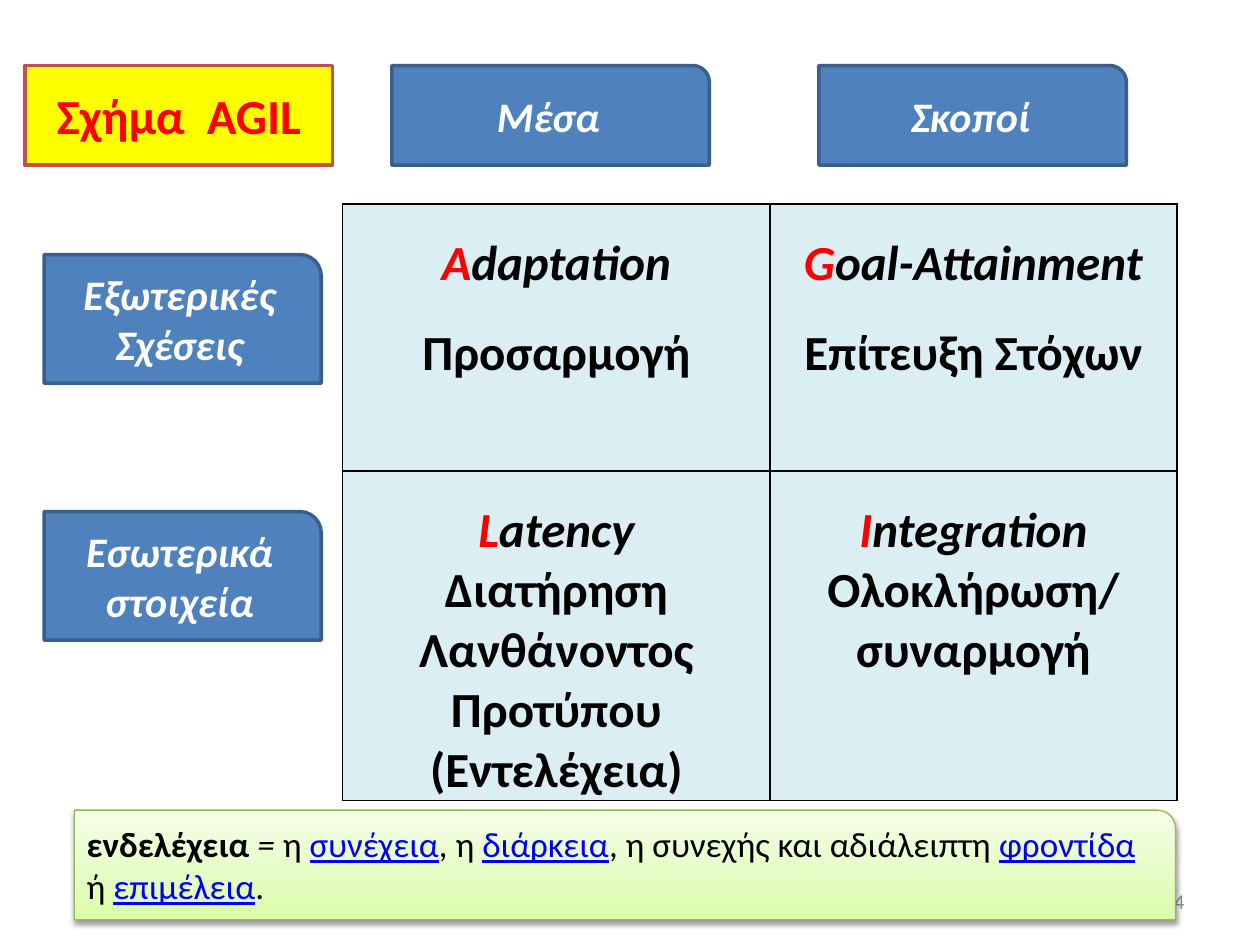
from dataclasses import dataclass

from lxml.etree import SubElement
from pptx import Presentation
from pptx.dml.color import RGBColor
from pptx.enum.shapes import MSO_SHAPE
from pptx.enum.text import MSO_ANCHOR, PP_ALIGN
from pptx.oxml import parse_xml
from pptx.oxml.ns import nsdecls, qn
from pptx.util import Inches, Pt

FONT = "Calibri"
BLACK = RGBColor(0x00, 0x00, 0x00)
WHITE = RGBColor(0xFF, 0xFF, 0xFF)
RED = RGBColor(0xFF, 0x00, 0x00)
YELLOW = RGBColor(0xFF, 0xFF, 0x00)
BLUE = RGBColor(0x4F, 0x81, 0xBD)
DARK_BLUE = RGBColor(0x3A, 0x5F, 0x8C)
BRICK = RGBColor(0xC0, 0x50, 0x4D)
PALE_BLUE = RGBColor(0xDB, 0xEE, 0xF4)
GREEN = RGBColor(0x98, 0xB9, 0x55)
GREY = RGBColor(0x8C, 0x8C, 0x8C)
LINK_BLUE = RGBColor(0x00, 0x00, 0xFF)
NOTE_STOPS = ((0, "DAFDA7"), (35, "E4FCC2"), (100, "F5FFE7"))


@dataclass
class Label:
    lines: list[str]
    left: float
    top: float
    width: float
    height: float


@dataclass
class Function:
    """One AGIL function: English name, Greek lines and their line spacing."""
    name: str
    greek: list[str]
    spacing: float = 1.0


LABELS = [
    Label(["Εξωτερικές Σχέσεις"], 0.35, 2.02, 2.2, 1.02),
    Label(["Εσωτερικά", "στοιχεία"], 0.35, 4.06, 2.2, 1.02),
    Label(["Μέσα"], 3.11, 0.52, 2.52, 0.79),
    Label(["Σκοποί"], 6.5, 0.52, 2.44, 0.79),
]
TITLE = Label(["Σχήμα  AGIL"], 0.2, 0.52, 2.44, 0.79)
NOTE = Label([], 0.59, 6.43, 8.74, 0.87)
FUNCTIONS = [
    [Function("Adaptation", ["Προσαρμογή"], 1.5),
     Function("Goal-Attainment", ["Επίτευξη Στόχων"], 1.5)],
    [Function("Latency", ["Διατήρηση Λανθάνοντος", "Προτύπου", "(Εντελέχεια)"]),
     Function("Integration", ["Ολοκλήρωση/", "συναρμογή"])],
]
LINK = {"color": LINK_BLUE, "underline": True}
NOTE_RUNS = [
    ("ενδελέχεια ", {"bold": True}), ("= ", {"italic": True}), ("η ", {}),
    ("συνέχεια", LINK), (", η ", {}), ("διάρκεια", LINK),
    (", η συνεχής και αδιάλειπτη ", {}), ("φροντίδα", LINK),
    (" ή ", {}), ("επιμέλεια", LINK), (".", {}),
]


def add_run(p, text: str, *, size: float, color: RGBColor = BLACK,
            bold: bool = False, italic: bool = False,
            underline: bool = False) -> None:
    r = p.add_run()
    r.text = text
    r.font.name, r.font.size = FONT, Pt(size)
    r.font.bold, r.font.italic = bold, italic
    r.font.underline = underline
    r.font.color.rgb = color


def add_paragraph(tf, first: bool, align: PP_ALIGN, spacing: float = 1.0):
    p = tf.paragraphs[0] if first else tf.add_paragraph()
    p.alignment, p.line_spacing = align, spacing
    return p


def add_box(slide, label: Label, preset: MSO_SHAPE, line: RGBColor,
            line_width: float, fill: RGBColor | None = None, **text_format):
    sp = slide.shapes.add_shape(preset, Inches(label.left), Inches(label.top),
                                Inches(label.width), Inches(label.height))
    sp.shadow.inherit = False
    if fill is not None:
        sp.fill.solid()
        sp.fill.fore_color.rgb = fill
    sp.line.color.rgb = line
    sp.line.width = Pt(line_width)
    tf = sp.text_frame
    tf.word_wrap = True
    tf.vertical_anchor = MSO_ANCHOR.MIDDLE
    for i, text in enumerate(label.lines):
        add_run(add_paragraph(tf, i == 0, PP_ALIGN.CENTER), text, **text_format)
    return sp


def set_borders(cell) -> None:
    tc_pr = cell._tc.get_or_add_tcPr()
    for side in ("lnL", "lnR", "lnT", "lnB"):
        ln = SubElement(tc_pr, qn(f"a:{side}"), w=str(Pt(1)))
        fill = SubElement(ln, qn("a:solidFill"))
        SubElement(fill, qn("a:srgbClr"), val=str(BLACK))


def fill_cell(cell, function: Function) -> None:
    set_borders(cell)
    cell.fill.solid()
    cell.fill.fore_color.rgb = PALE_BLUE
    cell.margin_left = cell.margin_right = Inches(0.07)
    cell.margin_top = cell.margin_bottom = 0
    tf = cell.text_frame
    p = add_paragraph(tf, True, PP_ALIGN.CENTER, 1.5)
    add_run(p, function.name[0], size=28, color=RED, bold=True, italic=True)
    add_run(p, function.name[1:], size=28, bold=True, italic=True)
    for text in function.greek:
        p = add_paragraph(tf, False, PP_ALIGN.CENTER, function.spacing)
        add_run(p, text, size=28, bold=True)


def add_agil_table(slide) -> None:
    table = slide.shapes.add_table(2, 2, Inches(2.72), Inches(1.62),
                                   Inches(6.62), Inches(4.65)).table
    table.first_row = table.horz_banding = False
    for column, width in zip(table.columns, (3.39, 3.23)):
        column.width = Inches(width)
    for row, height, functions in zip(table.rows, (2.12, 2.53), FUNCTIONS):
        row.height = Inches(height)
        for cell, function in zip(row.cells, functions):
            fill_cell(cell, function)


def add_page_number(slide) -> None:
    box = slide.shapes.add_textbox(Inches(7.17), Inches(6.95),
                                   Inches(2.33), Inches(0.4))
    tf = box.text_frame
    tf.word_wrap = True
    tf.vertical_anchor = MSO_ANCHOR.MIDDLE
    add_run(add_paragraph(tf, True, PP_ALIGN.RIGHT), "14", size=12, color=GREY)


def add_note(slide) -> None:
    """Definition box with a vertical gradient and a soft shadow below."""
    sp = add_box(slide, NOTE, MSO_SHAPE.ROUND_1_RECTANGLE, GREEN, 0.75)
    stops = "".join(f'<a:gs pos="{pos * 1000}"><a:srgbClr val="{color}"/></a:gs>'
                    for pos, color in NOTE_STOPS)
    sp_pr = sp._element.spPr
    sp_pr.find(qn("a:prstGeom")).addnext(parse_xml(
        f'<a:gradFill {nsdecls("a")} rotWithShape="1"><a:gsLst>{stops}</a:gsLst>'
        '<a:lin ang="16200000" scaled="0"/></a:gradFill>'))
    shadow = SubElement(sp_pr.find(qn("a:effectLst")), qn("a:outerShdw"),
                        blurRad=str(Pt(3.1)), dist=str(Pt(1.6)),
                        dir="5400000", rotWithShape="0")
    color = SubElement(shadow, qn("a:srgbClr"), val=str(BLACK))
    SubElement(color, qn("a:alpha"), val="38000")
    p = add_paragraph(sp.text_frame, True, PP_ALIGN.LEFT)
    for text, text_format in NOTE_RUNS:
        add_run(p, text, size=20, **text_format)


def main() -> None:
    prs = Presentation()
    prs.slide_width, prs.slide_height = Inches(10), Inches(7.5)
    slide = prs.slides.add_slide(prs.slide_layouts[6])
    add_agil_table(slide)
    for label in LABELS:
        add_box(slide, label, MSO_SHAPE.ROUND_1_RECTANGLE, DARK_BLUE, 2,
                BLUE, size=24, color=WHITE, bold=True, italic=True)
    add_page_number(slide)
    add_note(slide)
    add_box(slide, TITLE, MSO_SHAPE.RECTANGLE, BRICK, 2, YELLOW,
            size=28, color=RED, bold=True)
    prs.save("out.pptx")


if __name__ == "__main__":
    main()
